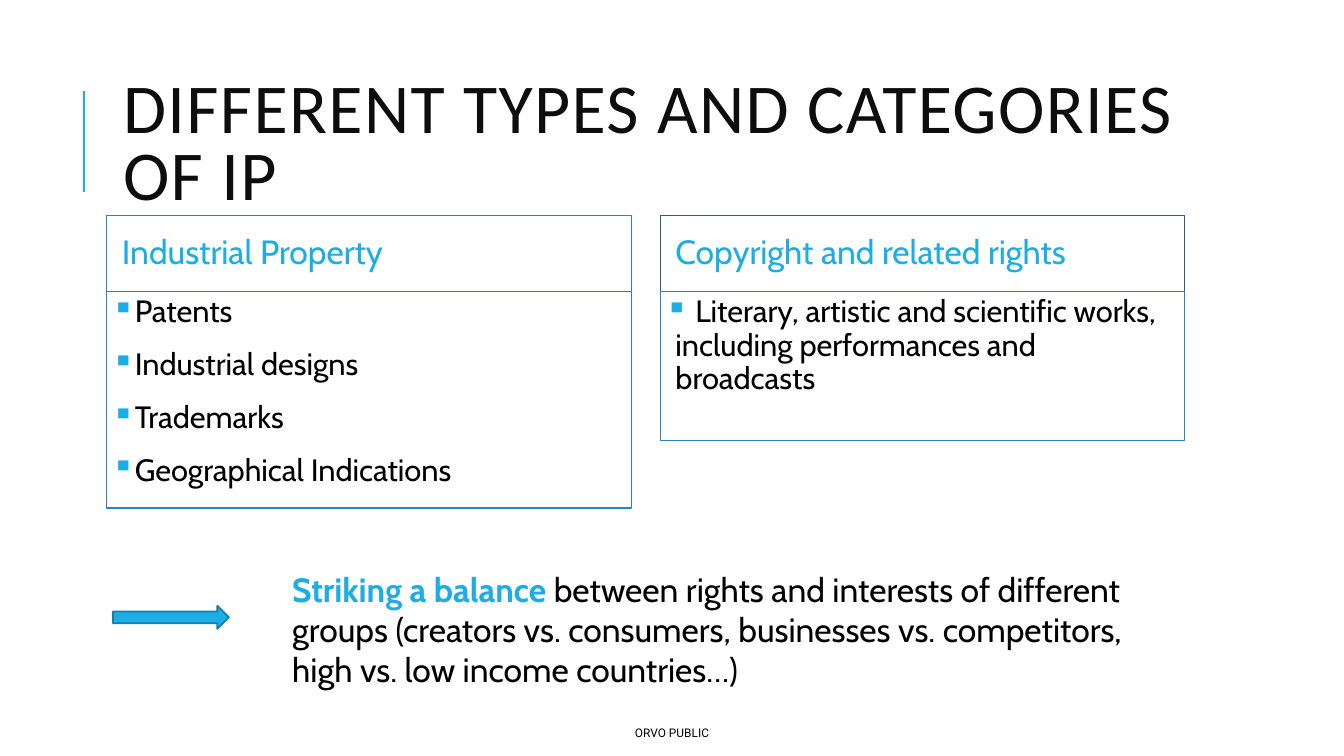
from lxml.etree import SubElement
from pptx import Presentation
from pptx.dml.color import RGBColor
from pptx.enum.shapes import MSO_CONNECTOR, MSO_SHAPE
from pptx.enum.text import MSO_ANCHOR, MSO_AUTO_SIZE, PP_ALIGN
from pptx.oxml.ns import qn
from pptx.util import Inches, Pt

COLORS = {
    "accent": "1CADE4",
    "border": "2683C6",
    "dark_border": "335B74",
    "arrow_border": "1580A9",
    "title": "0D0D0D",
    "text": "000000",
}
COLUMNS = [
    (1.06, "Industrial Property", "border", 2.15,
     ["Patents", "Industrial designs", "Trademarks", "Geographical Indications"]),
    (6.55, "Copyright and related rights", "dark_border", 1.48,
     [" Literary, artistic and scientific works, including performances and broadcasts"]),
]
COLUMN_TOP, COLUMN_WIDTH, HEADING_HEIGHT = 2.14, 5.2, 0.75


class SlideBuilder:
    """Holds the style and the current slide."""

    def __init__(self, slide):
        self.slide = slide
        self.shapes = slide.shapes

    def color(self, name):
        return RGBColor.from_string(COLORS[name])

    def format_run(self, run, size, color="text", font="Cabin", bold=False):
        run.font.size = Pt(size)
        run.font.name = font
        run.font.bold = bold
        run.font.color.rgb = self.color(color)

    def outline(self, shape, color, width):
        shape.line.color.rgb = self.color(color)
        shape.line.width = Pt(width)

    def title(self, text, left, top, width, height):
        title = self.shapes.title
        title.left, title.top = Inches(left), Inches(top)
        title.width, title.height = Inches(width), Inches(height)
        frame = title.text_frame
        frame.text = text
        frame.word_wrap = True
        frame.auto_size = MSO_AUTO_SIZE.NONE
        frame.vertical_anchor = MSO_ANCHOR.MIDDLE
        paragraph = frame.paragraphs[0]
        paragraph.alignment = PP_ALIGN.LEFT
        paragraph.line_spacing = 0.8
        run = paragraph.runs[0]
        self.format_run(run, 50, "title", "Calibri")
        run.font._element.set("spc", "100")

    def rule(self, x, top, bottom):
        line = self.shapes.add_connector(
            MSO_CONNECTOR.STRAIGHT, Inches(x), Inches(bottom), Inches(x), Inches(top))
        self.outline(line, "accent", 1.5)
        SubElement(line._element.spPr, qn("a:effectLst"))

    def shape(self, kind, left, top, width, height, border, line_width, fill=None):
        shape = self.shapes.add_shape(
            kind, Inches(left), Inches(top), Inches(width), Inches(height))
        shape.shadow.inherit = False
        self.outline(shape, border, line_width)
        if fill:
            shape.fill.solid()
            shape.fill.fore_color.rgb = self.color(fill)
        else:
            shape.fill.background()
        return shape

    def panel(self, left, top, width, height, border, lines, size, color, inset, anchor):
        panel = self.shape(MSO_SHAPE.RECTANGLE, left, top, width, height, border, 0.75)
        frame = panel.text_frame
        frame.text = "\n".join(lines)
        frame.word_wrap = True
        frame.vertical_anchor = anchor
        frame.margin_left = frame.margin_right = Inches(inset)
        frame.margin_top = frame.margin_bottom = Inches(0.05)
        for paragraph in frame.paragraphs:
            paragraph.alignment = PP_ALIGN.LEFT
            paragraph.line_spacing = 0.9
            self.format_run(paragraph.runs[0], size, color)
        return frame

    def heading(self, left, top, width, height, border, text):
        self.panel(left, top, width, height, border, [text], 24, "accent", 0.15,
                   MSO_ANCHOR.MIDDLE)

    def bullet_list(self, left, top, width, height, items):
        frame = self.panel(left, top, width, height, "border", items, 22, "text", 0.05,
                           MSO_ANCHOR.TOP)
        for paragraph in frame.paragraphs:
            paragraph.space_before = Pt(12)
            paragraph.space_after = Pt(2)
            properties = paragraph._p.get_or_add_pPr()
            properties.set("marL", str(Inches(0.1)))
            properties.set("indent", str(Inches(-0.1)))
            bullet_color = SubElement(properties, qn("a:buClr"))
            SubElement(bullet_color, qn("a:srgbClr"), val=COLORS["accent"])
            SubElement(properties, qn("a:buChar"), char="▪")

    def text(self, left, top, width, height, parts, align=PP_ALIGN.LEFT):
        box = self.shapes.add_textbox(
            Inches(left), Inches(top), Inches(width), Inches(height))
        frame = box.text_frame
        frame.word_wrap = True
        frame.auto_size = MSO_AUTO_SIZE.SHAPE_TO_FIT_TEXT
        paragraph = frame.paragraphs[0]
        paragraph.alignment = align
        for text, style in parts:
            run = paragraph.add_run()
            run.text = text
            self.format_run(run, **style)


def main():
    presentation = Presentation()
    presentation.slide_width = Inches(13.33)
    presentation.slide_height = Inches(7.5)
    builder = SlideBuilder(presentation.slides.add_slide(presentation.slide_layouts[5]))

    builder.rule(0.83, 0.9, 1.9)
    builder.text(0, 7.15, 13.33, 0.24,
                 [("ORVO PUBLIC", {"size": 8.5, "font": "Roboto"})], PP_ALIGN.CENTER)
    builder.title("DIFFERENT TYPES AND CATEGORIES OF IP", 1.12, 0.64, 10.63, 1.64)

    for left, heading, border, list_height, items in COLUMNS:
        builder.heading(left, COLUMN_TOP, COLUMN_WIDTH, HEADING_HEIGHT, border, heading)
        builder.bullet_list(left, COLUMN_TOP + HEADING_HEIGHT, COLUMN_WIDTH, list_height, items)

    builder.text(2.8, 5.59, 9.07, 1.31, [
        ("Striking a balance ", {"size": 24, "color": "accent", "bold": True}),
        ("between rights and interests of different groups (creators vs. consumers, "
         "businesses vs. competitors, high vs. low income countries…)", {"size": 24}),
    ])
    builder.shape(MSO_SHAPE.RIGHT_ARROW, 1.12, 6.01, 1.15, 0.23, "arrow_border", 1.25, "accent")
    presentation.save("out.pptx")


if __name__ == "__main__":
    main()
